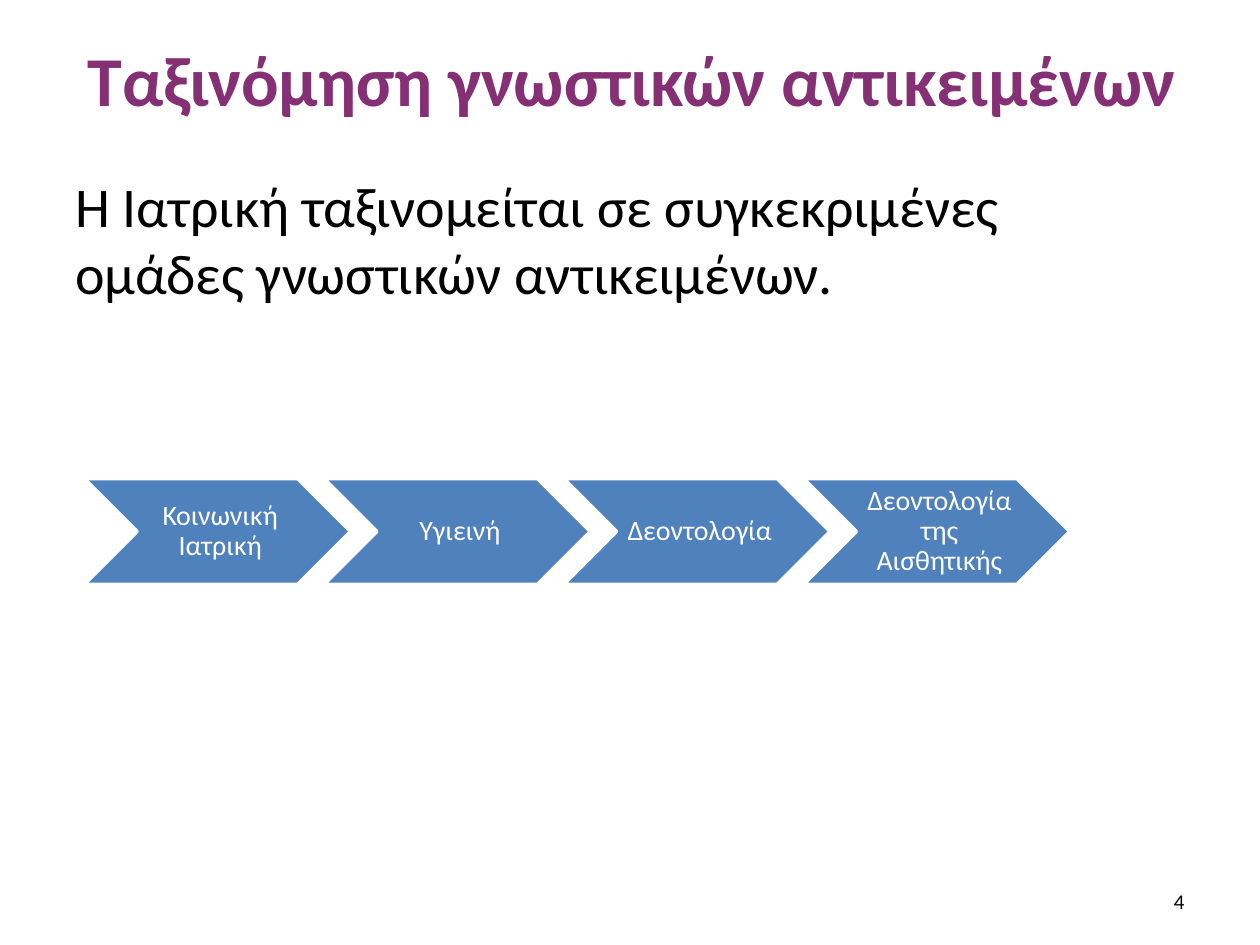
import pptx
import pptx.dml.color
import pptx.enum.shapes
import pptx.enum.text
import pptx.util

Cm = pptx.util.Cm
ALIGN = pptx.enum.text.PP_ALIGN
ANCHOR = pptx.enum.text.MSO_ANCHOR

TITLE = "Ταξινόμηση γνωστικών αντικειμένων"
STATEMENT = "Η Ιατρική ταξινομείται σε συγκεκριμένες ομάδες γνωστικών αντικειμένων."
SUBJECTS = ["Κοινωνική Ιατρική", "Υγιεινή", "Δεοντολογία", "Δεοντολογία της Αισθητικής"]
PAGE_NUMBER = "4"

THEME = {
    "font": "Calibri",
    "heading": "852F74",
    "ink": "000000",
    "white": "FFFFFF",
    "step": "4F81BD",
    "title_size": 40,
    "body_size": 32,
    "step_size": 16,
    "number_size": 12,
}

STEP_LEFT, STEP_TOP, STEP_WIDTH, STEP_HEIGHT = 1.7, 9.65, 5.37, 2.13
STEP_PITCH = STEP_WIDTH * 0.9


def rgb(name):
    return pptx.dml.color.RGBColor.from_string(THEME[name])


def write(holder, text, *, size, color, bold=False, align=ALIGN.LEFT,
          anchor=ANCHOR.TOP, spacing=1.0, insets=(0.25, 0.13, 0.25, 0.13)):
    frame = holder.text_frame
    frame.word_wrap = True
    frame.vertical_anchor = anchor
    frame.margin_left, frame.margin_top, frame.margin_right, frame.margin_bottom = map(Cm, insets)
    paragraph = frame.paragraphs[0]
    paragraph.alignment = align
    paragraph.line_spacing = spacing
    run = paragraph.add_run()
    run.text = text
    run.font.name = THEME["font"]
    run.font.size = pptx.util.Pt(THEME[size])
    run.font.bold = bold
    run.font.color.rgb = rgb(color)


def main():
    deck = pptx.Presentation()
    deck.slide_width, deck.slide_height = Cm(25.4), Cm(19.05)
    slide = deck.slides.add_slide(deck.slide_layouts[6])
    shapes = slide.shapes

    title = shapes.add_textbox(Cm(1.3), Cm(0.33), Cm(22.86), Cm(2.51))
    write(title, TITLE, size="title_size", color="heading", bold=True,
          align=ALIGN.CENTER, anchor=ANCHOR.MIDDLE)

    statement = shapes.add_textbox(Cm(1.27), Cm(3.33), Cm(21.23), Cm(3.2))
    write(statement, STATEMENT, size="body_size", color="ink")

    for index, subject in enumerate(SUBJECTS):
        step = shapes.add_shape(
            pptx.enum.shapes.MSO_SHAPE.CHEVRON,
            Cm(STEP_LEFT + index * STEP_PITCH), Cm(STEP_TOP), Cm(STEP_WIDTH), Cm(STEP_HEIGHT))
        step.shadow.inherit = False
        step.fill.solid()
        step.fill.fore_color.rgb = rgb("step")
        step.line.color.rgb = rgb("white")
        step.line.width = pptx.util.Pt(2)
        write(step, subject, size="step_size", color="white", align=ALIGN.CENTER,
              anchor=ANCHOR.MIDDLE, spacing=0.9, insets=(0.17, 0.06, 0.06, 0.06))

    page_number = shapes.add_textbox(Cm(18.21), Cm(17.65), Cm(5.92), Cm(1.02))
    write(page_number, PAGE_NUMBER, size="number_size", color="ink",
          align=ALIGN.RIGHT, anchor=ANCHOR.MIDDLE)

    deck.save("out.pptx")


if __name__ == "__main__":
    main()
